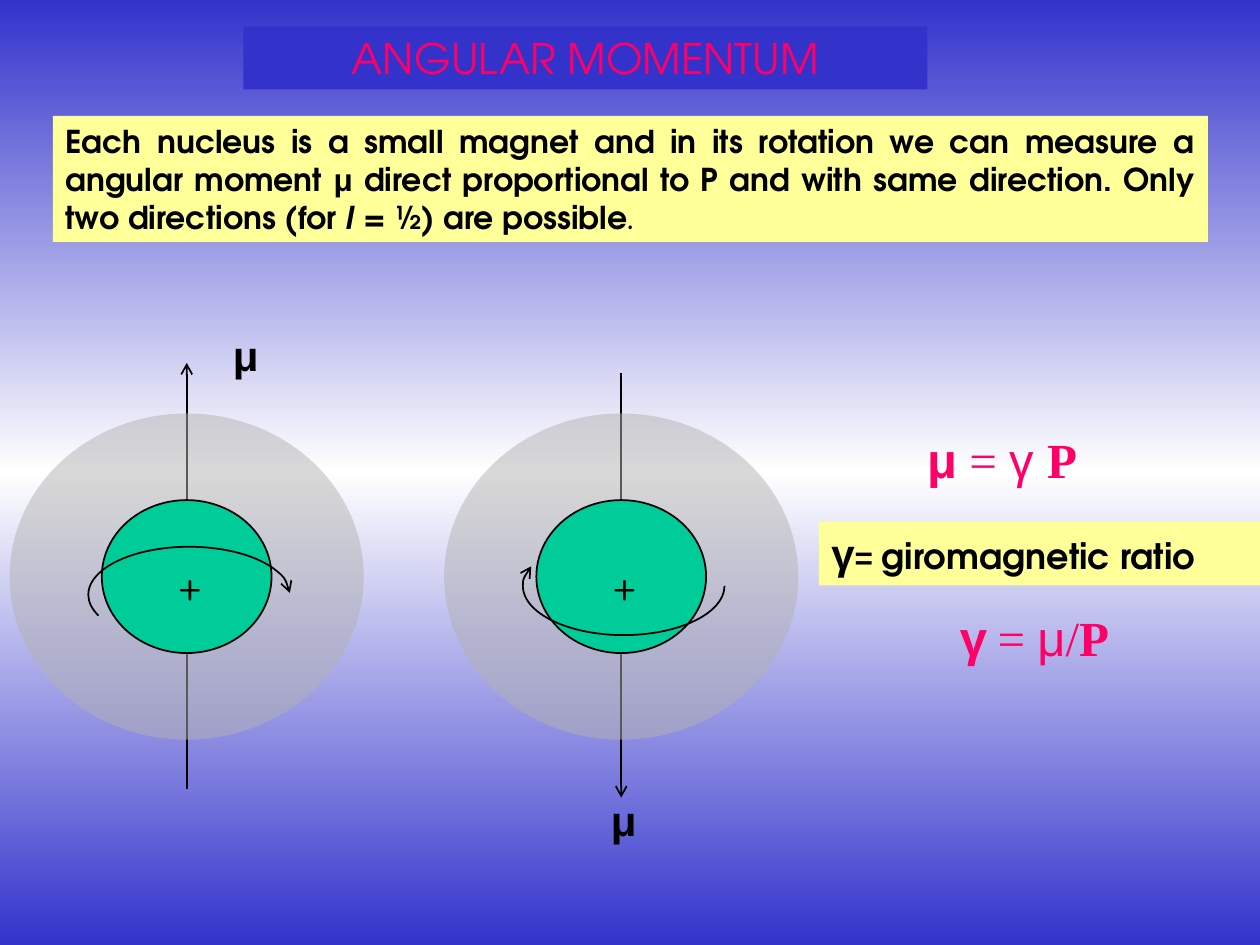
"""Build the angular momentum slide with two spinning nuclei."""
from copy import deepcopy
from dataclasses import dataclass

from lxml import etree
from pptx import Presentation
from pptx.dml.color import RGBColor
from pptx.enum.shapes import MSO_CONNECTOR, MSO_SHAPE
from pptx.enum.text import MSO_ANCHOR, MSO_AUTO_SIZE, PP_ALIGN
from pptx.oxml.ns import qn
from pptx.util import Pt

BLUE = RGBColor(0x33, 0x33, 0xCC)
WHITE = RGBColor(0xFF, 0xFF, 0xFF)
YELLOW = RGBColor(0xFF, 0xFF, 0x99)
PINK = RGBColor(0xFF, 0x00, 0x66)
GREEN = RGBColor(0x00, 0xCC, 0x99)
GREY = RGBColor(0xB2, 0xB2, 0xB2)
BLACK = RGBColor(0x00, 0x00, 0x00)

OVAL, ARC = MSO_SHAPE.OVAL, MSO_SHAPE.ARC
STRAIGHT = MSO_CONNECTOR.STRAIGHT
LEFT, CENTER, JUSTIFY = PP_ALIGN.LEFT, PP_ALIGN.CENTER, PP_ALIGN.JUSTIFY
TOP, MIDDLE = MSO_ANCHOR.TOP, MSO_ANCHOR.MIDDLE
NO_FIT = MSO_AUTO_SIZE.NONE

ADVENTOR, ARIAL, TIMES = "TeX Gyre Adventor", "Arial", "Times New Roman"
CENTER_Y = 329.5
HALO, DISC = (202.4, 186.4), (97, 87.4)
SPIN_WIDTH = 115.2


@dataclass(frozen=True)
class Span:
    text: str
    size: float
    font: str = ARIAL
    color: RGBColor = BLACK
    bold: bool = False
    italic: bool = False


@dataclass(frozen=True)
class Label:
    left: float
    top: float
    width: float
    height: float
    spans: tuple[Span, ...]
    fill: RGBColor | None = None


@dataclass(frozen=True)
class Nucleus:
    center: float
    axis_start: float
    axis_tip: float
    spin_top: float
    spin_height: float
    spin_from: float
    spin_to: float


MU = (Span("μ", 24, bold=True),)
TITLE = Label(139, 15.1, 391, 36, (Span("ANGULAR MOMENTUM", 24, ADVENTOR, PINK),), BLUE)
STATEMENT = Label(30.2, 66.2, 660, 72, (
    Span("Each nucleus is a small magnet and in its rotation we can measure a "
         "angular moment ", 18, ADVENTOR, bold=True),
    Span("μ ", 18, bold=True),
    Span("direct proportional to P and with same direction. Only two directions (for ",
         18, ADVENTOR, bold=True),
    Span("I", 18, ADVENTOR, bold=True, italic=True),
    Span(" = ½) are possible", 18, ADVENTOR, bold=True),
    Span(".", 18, "Comic Neue", bold=True),
), YELLOW)
LABELS = (
    Label(522.7, 241.9, 101, 41, (
        Span("μ", 28, ARIAL, PINK, True), Span(" = ", 28, TIMES, PINK),
        Span("γ ", 28, ARIAL, PINK), Span("P", 28, TIMES, PINK, True))),
    Label(468, 298.1, 252, 36.4, (
        Span("γ", 24, bold=True), Span("= ", 18, bold=True),
        Span("giromagnetic ratio", 20, ADVENTOR, bold=True)), YELLOW),
    Label(541.4, 343.4, 101.5, 41, (
        Span("γ", 28, ARIAL, PINK, True), Span(" ", 24, TIMES),
        Span("= ", 28, TIMES, PINK), Span("μ", 28, ARIAL, PINK),
        Span("/", 28, TIMES, PINK), Span("P", 28, TIMES, PINK, True))),
    Label(126, 185, 28, 36, MU),
    Label(342, 450.7, 28, 36, MU),
)
NUCLEI = (
    Nucleus(106.7, 450.7, 207.4, 312.5, 54.7, 167, 359),
    Nucleus(355, 213.1, 455.8, 306.7, 56.2, 0, 192),
)


def write_label(box, label: Label, align=LEFT, anchor=TOP, wrap: bool = True) -> None:
    """Place a text holder and fill it with formatted spans."""
    for name in ("left", "top", "width", "height"):
        setattr(box, name, Pt(getattr(label, name)))
    if label.fill is not None:
        box.fill.solid()
        box.fill.fore_color.rgb = label.fill
    frame = box.text_frame
    frame_format = {"auto_size": NO_FIT, "word_wrap": wrap, "vertical_anchor": anchor}
    for name, value in frame_format.items():
        setattr(frame, name, value)
    para = frame.paragraphs[0]
    para.alignment = align
    para.space_before = Pt(0)
    for span in label.spans:
        run = para.add_run()
        run.text = span.text
        font_format = {"name": span.font, "size": Pt(span.size),
                       "bold": span.bold, "italic": span.italic}
        for name, value in font_format.items():
            setattr(run.font, name, value)
        run.font.color.rgb = span.color


def add_label(page, label: Label) -> None:
    """Add a free-standing text box."""
    box = page.shapes.add_textbox(0, 0, 0, 0)
    write_label(box, label, wrap=label.fill is not None)


def add_arrowhead(shape) -> None:
    """Put an open arrowhead at the end of a line."""
    line = shape.line._get_or_add_ln()
    etree.SubElement(line, qn("a:tailEnd"), type="arrow")


def style_line(shape) -> None:
    """Give a shape or connector a thin black line."""
    shape.line.color.rgb = BLACK
    shape.line.width = Pt(1)


def add_oval(page, center: float, size: tuple[float, float], color: RGBColor):
    """Add a filled oval around a nucleus centre."""
    width, height = size
    oval = page.shapes.add_shape(OVAL, Pt(center - width / 2), Pt(CENTER_Y - height / 2),
                                 Pt(width), Pt(height))
    oval.shadow.inherit = False
    oval.fill.solid()
    oval.fill.fore_color.rgb = color
    return oval


def add_nucleus(page, nucleus: Nucleus) -> None:
    """Draw the axis, halo, disc, spin arrow and charge of one nucleus."""
    x = nucleus.center
    axis = page.shapes.add_connector(STRAIGHT, Pt(x), Pt(nucleus.axis_start),
                                     Pt(x), Pt(nucleus.axis_tip))
    style_line(axis)
    add_arrowhead(axis)
    etree.SubElement(axis._element.spPr, qn("a:effectLst"))

    halo = add_oval(page, x, HALO, GREY)
    halo.line.fill.background()
    color = halo._element.spPr.find(qn("a:solidFill"))[0]
    etree.SubElement(color, qn("a:alpha"), val="50000")
    style_line(add_oval(page, x, DISC, GREEN))

    spin = page.shapes.add_shape(ARC, Pt(x - 56.2), Pt(nucleus.spin_top),
                                 Pt(SPIN_WIDTH), Pt(nucleus.spin_height))
    spin.shadow.inherit = False
    spin.fill.background()
    for index, angle in enumerate((nucleus.spin_from, nucleus.spin_to)):
        spin.adjustments[index] = angle * 0.6
    style_line(spin)
    add_arrowhead(spin)
    add_label(page, Label(x - 12, 316.1, 28.6, 36, (Span("+", 24, "Quicksand"),)))


def paint_background(page) -> None:
    """Fill the page with a vertical blue, white, blue gradient."""
    fill = page.background.fill
    fill.gradient()
    fill.gradient_angle = 90
    first = page._element.find(".//" + qn("a:gs"))
    first.addnext(deepcopy(first))
    for stop, position, color in zip(fill.gradient_stops, (0, 0.5, 1), (BLUE, WHITE, BLUE)):
        stop.position = position
        stop.color.rgb = color


def main() -> None:
    """Assemble and save the deck."""
    deck = Presentation()
    deck.slide_width, deck.slide_height = Pt(720), Pt(540)
    page = deck.slides.add_slide(deck.slide_layouts[1])
    paint_background(page)
    write_label(page.shapes.title, TITLE, CENTER, MIDDLE)
    body = page.placeholders[1]
    write_label(body, STATEMENT, JUSTIFY, MIDDLE)
    properties = body.text_frame.paragraphs[0]._p.get_or_add_pPr()
    for name in ("marL", "indent"):
        properties.set(name, "0")
    etree.SubElement(properties, qn("a:buNone"))
    for nucleus in NUCLEI:
        add_nucleus(page, nucleus)
    for label in LABELS:
        add_label(page, label)
    deck.save("out.pptx")


if __name__ == "__main__":
    main()
